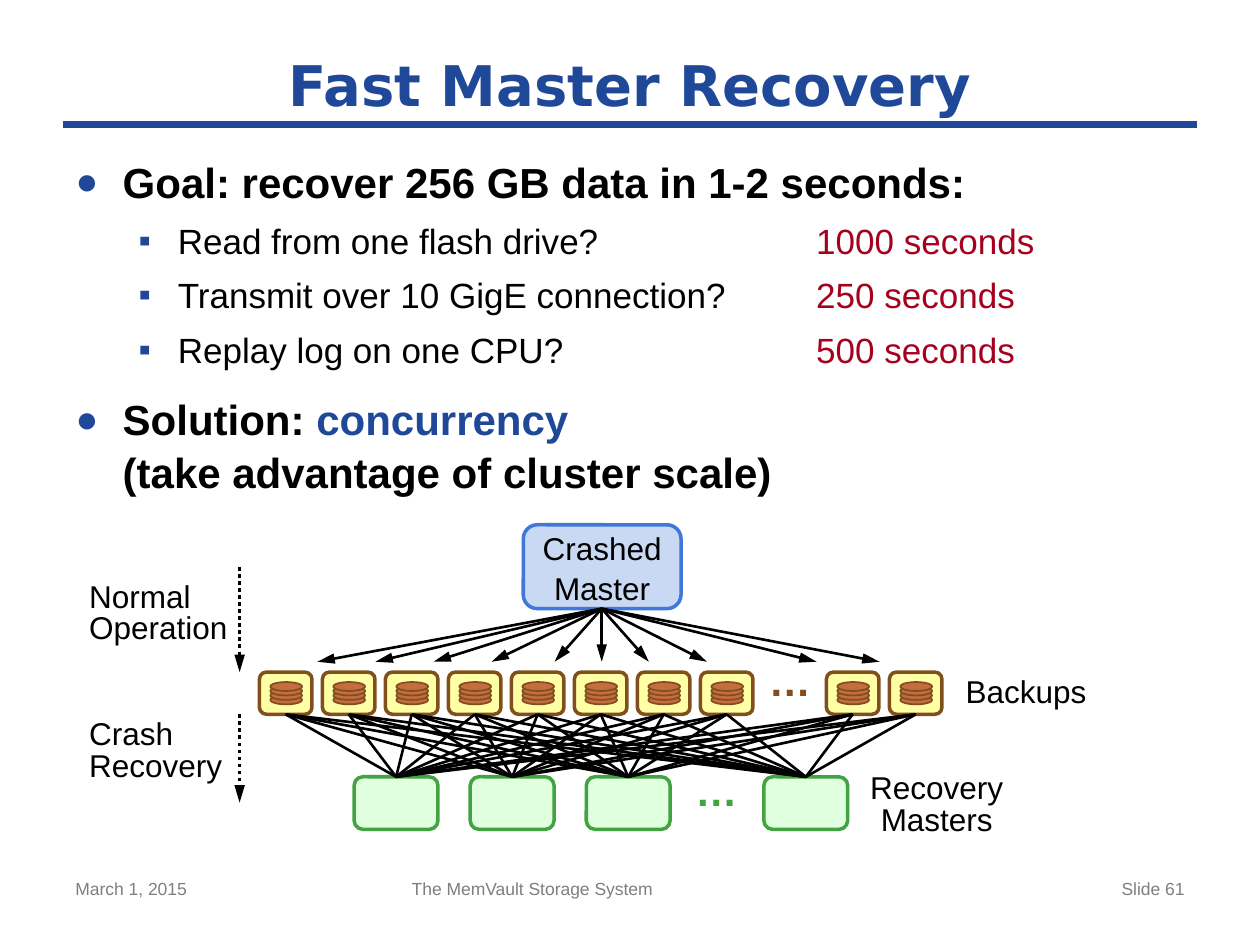
from itertools import product

from lxml.etree import SubElement as Sub
from pptx import Presentation as Deck
from pptx.dml.color import RGBColor as RGB
from pptx.enum.dml import MSO_LINE as Dash
from pptx.enum.shapes import MSO_CONNECTOR as Link, MSO_SHAPE as Kind
from pptx.enum.text import MSO_ANCHOR as Anchor, MSO_AUTO_SIZE as Fit, PP_ALIGN as Align
from pptx.oxml.ns import qn
from pptx.util import Cm, Pt

BLUE = RGB(0x1F, 0x48, 0x99)
RED = RGB(0xA5, 0x00, 0x1E)
BLACK = RGB(0x00, 0x00, 0x00)
GRAY = RGB(0x7F, 0x7F, 0x7F)
BROWN = RGB(0x81, 0x4F, 0x1D)
YELLOW = RGB(0xFF, 0xFF, 0xA5)
COPPER = RGB(0xC5, 0x6D, 0x41)
GREEN = RGB(0x43, 0xA3, 0x43)
MINT = RGB(0xDF, 0xFF, 0xDF)
SKY = RGB(0xC9, 0xD8, 0xF3)
AZURE = RGB(0x41, 0x77, 0xD7)

# Backup row: eleven columns, the ninth holds the dots
COLS = [col for col in range(11) if col != 8]
STEP, LEFT, TOP, WIDE, HIGH = 1.27, 5.23, 13.55, 1.06, 0.85
TIPS = [6.4, 7.57, 8.74, 9.91, 11.18, 12.13, 13.08, 14.25, 16.46, 17.73]
# Recovery row: three boxes at an even pitch, then the last one
CELLS = [7.14 + 2.34 * i for i in range(3)] + [15.4]
ROW, CELL = 15.66, 1.69


def write(par, text, size=18, color=BLACK, bold=False, font="Arial", align=None):
    """Add formatted text to a paragraph; a newline is a line break."""
    if align is not None:
        par.alignment = align
    for i, line in enumerate(text.split("\n")):
        if i:
            par.add_line_break()
        if line:
            run = par.add_run()
            run.text = line
            run.font.name, run.font.size = font, Pt(size)
            run.font.bold, run.font.color.rgb = bold, color


def label(slide, at, *lines, lead=None, wrap=False, **form):
    """Place a text box with one paragraph per line."""
    frame = slide.shapes.add_textbox(*map(Cm, at)).text_frame
    frame.word_wrap = wrap
    for i, line in enumerate(lines):
        par = frame.add_paragraph() if i else frame.paragraphs[0]
        if lead:
            par.line_spacing = Pt(lead)
        write(par, line, **form)


def block(shapes, kind, at, fill, edge, width=2):
    item = shapes.add_shape(kind, *map(Cm, at))
    item.shadow.inherit = False
    item.fill.solid()
    item.fill.fore_color.rgb = fill
    item.line.color.rgb = edge
    item.line.width = Pt(width)
    return item


def link(slide, start, end, color=BLACK, width=1.5, arrow=False, dash=None):
    item = slide.shapes.add_connector(Link.STRAIGHT, *map(Cm, start + end))
    item.line.color.rgb = color
    item.line.width = Pt(width)
    if dash:
        item.line.dash_style = dash
    props = item._element.spPr
    if arrow:
        Sub(props.find(qn("a:ln")), qn("a:tailEnd"), type="triangle", w="med", len="lg")
    Sub(props, qn("a:effectLst"))


def bullet(par, level):
    """Set the indent, bullet, spacing and tab stop of a list item."""
    sign, size, left, hang, gap = [("●", 90, 0.95, 0.95, 12), ("▪", 100, 2.06, 0.79, 6)][level]
    par.level = level
    par.space_before, par.line_spacing = Pt(gap), 1.05
    props = par._p.get_or_add_pPr()
    props.set("marL", str(Cm(left)))
    props.set("indent", str(-Cm(hang)))
    Sub(Sub(props, qn("a:buClr")), qn("a:srgbClr"), val=str(BLUE))
    Sub(props, qn("a:buSzPct"), val=str(size * 1000))
    Sub(props, qn("a:buFont"), typeface="Arial")
    Sub(props, qn("a:buChar"), char=sign)
    Sub(Sub(props, qn("a:tabLst")), qn("a:tab"), pos=str(Cm(14.93)), algn="l")


def place(holder, at):
    holder.left, holder.top, holder.width, holder.height = map(Cm, at)
    frame = holder.text_frame
    frame.auto_size, frame.word_wrap = Fit.NONE, True
    return frame


def body(slide):
    frame = place(slide.placeholders[1], (1.27, 2.97, 22.86, 7.62))
    frame.vertical_anchor = Anchor.TOP
    items = [
        (0, [("Goal: recover 256 GB data in 1-2 seconds:", BLACK)]),
        (1, [("Read from one flash drive?\t", BLACK), ("1000 seconds", RED)]),
        (1, [("Transmit over 10 GigE connection?\t", BLACK), ("250 seconds", RED)]),
        (1, [("Replay log on one CPU?\t", BLACK), ("500 seconds", RED)]),
        (0, [("Solution: ", BLACK), ("concurrency\n", BLUE),
             ("(take advantage of cluster scale)", BLACK)]),
    ]
    for i, (level, parts) in enumerate(items):
        par = frame.add_paragraph() if i else frame.paragraphs[0]
        bullet(par, level)
        for text, color in parts:
            write(par, text, size=20 if level else 24, color=color, bold=not level)


def backup(slide, left):
    """Draw a backup server with its stack of four disks."""
    group = slide.shapes.add_group_shape().shapes
    block(group, Kind.ROUNDED_RECTANGLE, (left, TOP, WIDE, HIGH), YELLOW, BROWN)
    for i in range(4):
        at = (left + 0.22, TOP + 0.47 - 0.09 * i, 0.64, 0.18)
        block(group, Kind.OVAL, at, COPPER, BROWN, 1)


def cluster(slide):
    # Crashed master
    box = block(slide.shapes, Kind.ROUNDED_RECTANGLE, (10.55, 10.58, 3.18, 1.69), SKY, AZURE)
    frame = box.text_frame
    frame.word_wrap, frame.vertical_anchor = False, Anchor.MIDDLE
    par = frame.paragraphs[0]
    par.line_spacing = 1.05
    write(par, "Crashed\nMaster", align=Align.CENTER)

    # Backups and recovery masters
    for col in COLS:
        backup(slide, LEFT + STEP * col)
    for left in CELLS:
        block(slide.shapes, Kind.ROUNDED_RECTANGLE, (left, ROW, CELL, 1.06), MINT, GREEN)

    # Links between the rows
    for tip in TIPS:
        link(slide, (12.13, 12.27), (tip, 13.34), arrow=True)
    for col, left in product(COLS, CELLS):
        link(slide, (LEFT + STEP * col + WIDE / 2, TOP + HIGH), (left + CELL / 2, ROW))

    # Dots and row names
    dots = dict(size=24, bold=True, align=Align.CENTER)
    label(slide, (15.24, 13.06, 1.37, 1.27), "…", color=BROWN, **dots)
    label(slide, (13.49, 15.29, 1.9, 1.27), "…", color=GREEN, **dots)
    label(slide, (19.2, 13.54, 2.97, 0.89), "Backups", lead=18, align=Align.CENTER)
    label(slide, (17.27, 15.49, 3.23, 1.55), "Recovery", "Masters",
          lead=18, align=Align.CENTER)

    # Phases at the left
    phases = [("Normal\nOperation", 11.63, 11.43, 13.55),
              ("Crash\nRecovery", 14.4, 14.4, 16.18)]
    for text, top, start, end in phases:
        link(slide, (4.83, start), (4.83, end), width=2, arrow=True, dash=Dash.ROUND_DOT)
        label(slide, (1.55, top, 3.3, 1.55), text, lead=18)


def main():
    deck = Deck()
    deck.slide_width, deck.slide_height = Cm(25.4), Cm(19.05)
    slide = deck.slides.add_slide(deck.slide_layouts[1])

    # Title and rule
    link(slide, (1.27, 2.51), (24.13, 2.51), BLUE, 4)
    frame = place(slide.shapes.title, (1.27, 0.84, 22.86, 1.7))
    frame.vertical_anchor = Anchor.MIDDLE
    write(frame.paragraphs[0], "Fast Master Recovery", size=32, color=BLUE,
          bold=True, font="DejaVu Sans", align=Align.CENTER)

    body(slide)
    cluster(slide)

    # Footer
    for left, width, text, align in [
        (1.27, 5.92, "March 1, 2015", Align.LEFT),
        (8.05, 9.53, "The MemVault Storage System", Align.LEFT),
        (18.21, 5.92, "Slide 61", Align.RIGHT),
    ]:
        label(slide, (left, 17.58, width, 1.09), text, wrap=True,
              size=10, color=GRAY, align=align)
    deck.save("out.pptx")


if __name__ == "__main__":
    main()
